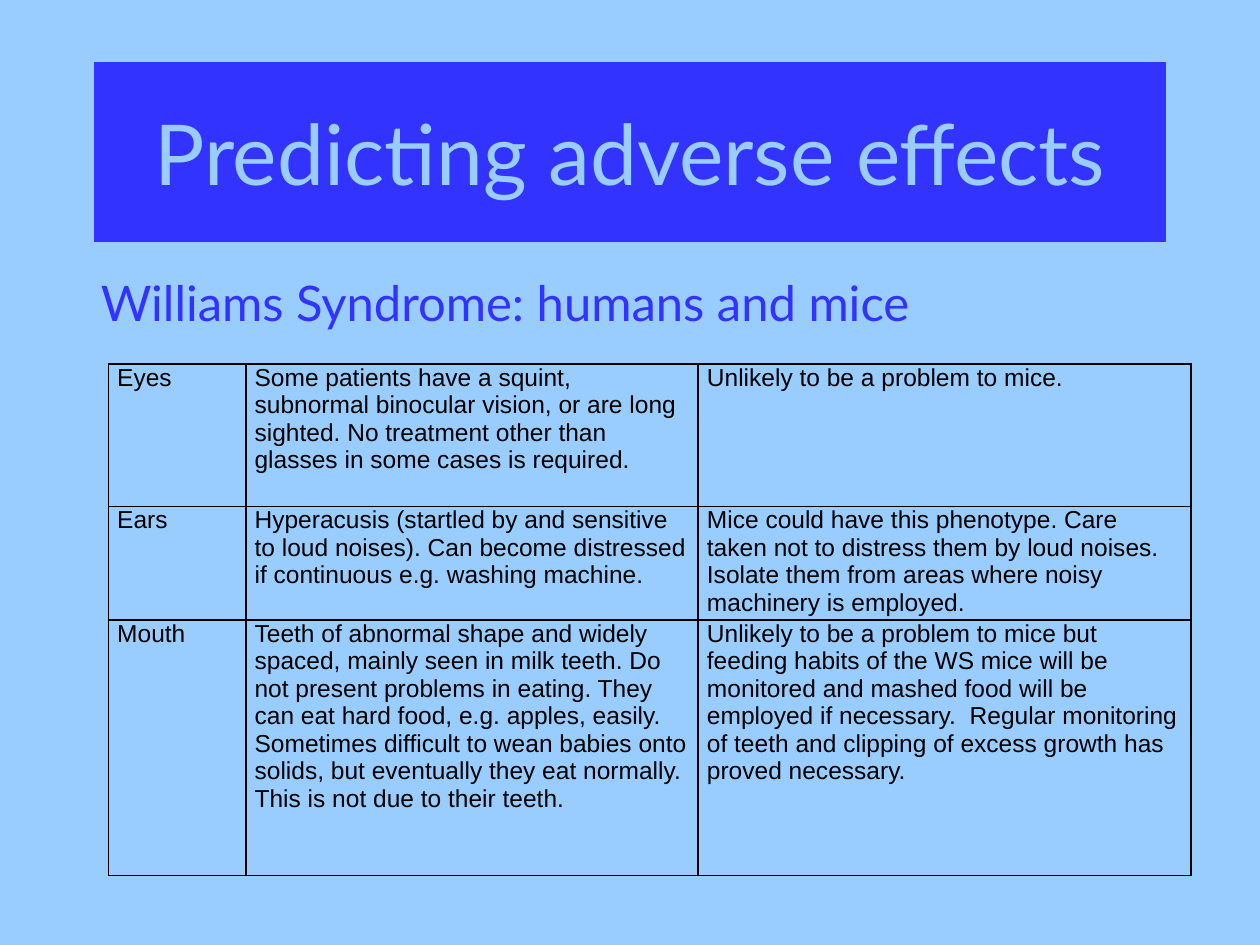
import pptx
import pptx.util
import pptx.dml.color
import pptx.enum.text
import pptx.oxml
import pptx.oxml.ns

Pt = pptx.util.Pt
RGBColor = pptx.dml.color.RGBColor

SKY = RGBColor(0x99, 0xCC, 0xFF)
BLUE = RGBColor(0x33, 0x33, 0xFF)
BLACK = RGBColor(0, 0, 0)

TITLE = "Predicting adverse effects"
SUBTITLE = "Williams Syndrome: humans and mice"
ROWS = [
    ("Eyes",
     "Some patients have a squint, subnormal binocular vision, or are long sighted. "
     "No treatment other than glasses in some cases is required.",
     "Unlikely to be a problem to mice."),
    ("Ears",
     "Hyperacusis (startled by and sensitive to loud noises). Can become distressed "
     "if continuous e.g. washing machine.",
     "Mice could have this phenotype. Care taken not to distress them by loud noises. "
     "Isolate them from areas where noisy machinery is employed."),
    ("Mouth",
     "Teeth of abnormal shape and widely spaced, mainly seen in milk teeth. Do not "
     "present problems in eating. They can eat hard food, e.g. apples, easily. "
     "Sometimes difficult to wean babies onto solids, but eventually they eat normally. "
     "This is not due to their teeth.",
     "Unlikely to be a problem to mice but feeding habits of the WS mice will be "
     "monitored and mashed food will be employed if necessary.  Regular monitoring of "
     "teeth and clipping of excess growth has proved necessary."),
]
COLUMN_WIDTHS = [78.5, 258.5, 281.5]
ROW_HEIGHTS = [81.4, 64.8, 146.2]


def write(frame, text, font_name, size, color):
    frame.word_wrap = True
    para = frame.paragraphs[0]
    para.text = text
    para.font.name = font_name
    para.font.size = Pt(size)
    para.font.color.rgb = color
    return para


def add_borders(cell, width, color):
    properties = cell._tc.get_or_add_tcPr()
    for position, side in enumerate(("lnL", "lnR", "lnT", "lnB")):
        properties.insert(position, pptx.oxml.parse_xml(
            f'<a:{side} {pptx.oxml.ns.nsdecls("a")} w="{Pt(width)}">'
            f'<a:solidFill><a:srgbClr val="{color}"/></a:solidFill></a:{side}>'))


def add_title(page):
    title = page.shapes.title
    title.left, title.top, title.width, title.height = Pt(54), Pt(36), Pt(612), Pt(102)
    title.fill.solid()
    title.fill.fore_color.rgb = BLUE
    title.line.color.rgb = BLUE
    title.line.width = Pt(0.75)
    title.text_frame.vertical_anchor = pptx.enum.text.MSO_ANCHOR.MIDDLE
    para = write(title.text_frame, TITLE, "Lato", 48, SKY)
    para.alignment = pptx.enum.text.PP_ALIGN.CENTER


def add_findings(page):
    table = page.shapes.add_table(
        len(ROWS), len(COLUMN_WIDTHS), Pt(62), Pt(208),
        Pt(sum(COLUMN_WIDTHS)), Pt(sum(ROW_HEIGHTS))).table
    table.first_row = table.horz_banding = False
    for column, width in zip(table.columns, COLUMN_WIDTHS):
        column.width = Pt(width)
    for row, height, texts in zip(table.rows, ROW_HEIGHTS, ROWS):
        row.height = Pt(height)
        for cell, text in zip(row.cells, texts):
            cell.margin_left = cell.margin_right = Pt(5)
            cell.margin_top = cell.margin_bottom = 0
            cell.fill.background()
            add_borders(cell, 1, BLACK)
            write(cell.text_frame, text, "Arial", 14, BLACK)


def main():
    deck = pptx.Presentation()
    deck.slide_width, deck.slide_height = Pt(720), Pt(540)
    page = deck.slides.add_slide(deck.slide_layouts[5])
    page.background.fill.solid()
    page.background.fill.fore_color.rgb = SKY
    add_title(page)
    add_findings(page)
    box = page.shapes.add_textbox(Pt(50.5), Pt(152), Pt(568), Pt(41))
    write(box.text_frame, SUBTITLE, "Lato", 28, BLUE)
    deck.save("out.pptx")


if __name__ == "__main__":
    main()
